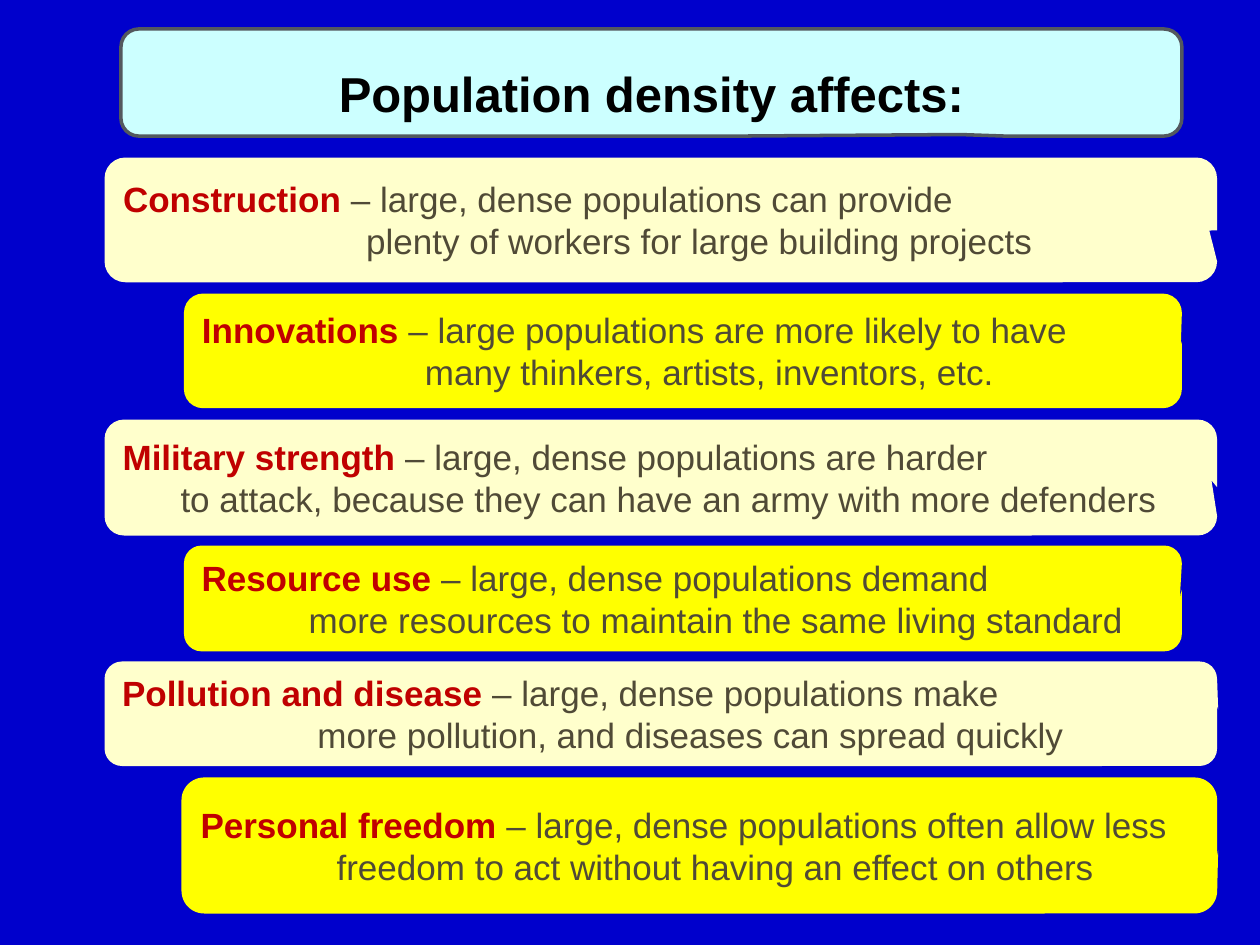
from pptx import Presentation
from pptx import util as u
from pptx.dml.color import RGBColor
from pptx.enum import shapes, text


def paint(part, hue):
    part.solid()
    part.fore_color.rgb = RGBColor.from_string(hue)


def callout(left, top, width, height, hue, tip):
    box = slide.shapes.add_shape(
        shapes.MSO_SHAPE.ROUNDED_RECTANGULAR_CALLOUT,
        u.Inches(left), u.Inches(top), u.Inches(width), u.Inches(height))
    box.shadow.inherit = False
    for i, value in enumerate((*tip, 0.167)):
        box.adjustments[i] = value
    paint(box.fill, hue)
    box.line.fill.background()
    return box


deck = Presentation()
deck.slide_width, deck.slide_height = u.Inches(10), u.Inches(7.5)
slide = deck.slides.add_slide(deck.slide_layouts[5])
paint(slide.background.fill, "0000CC")

banner = callout(0.96, 0.23, 8.42, 0.85, "CCFFFF", (0.291, 0.486))
paint(banner.line.fill, "53585E")
banner.line.width = u.Pt(2)

title = slide.shapes.title
title.left, title.top = banner.left, banner.top
title.width, title.height = banner.width, banner.height
slide.shapes._spTree.append(title._element)
frame = title.text_frame
frame.text = "Population density affects:"
frame.vertical_anchor = text.MSO_ANCHOR.MIDDLE
frame.margin_top, frame.margin_bottom = u.Inches(0.22), u.Inches(0.05)
para = frame.paragraphs[0]
para.alignment = text.PP_ALIGN.CENTER
para.font.name, para.font.size, para.font.bold = "Arial", u.Pt(28), True
paint(para.font.fill, "000000")

cream, yellow = "FFFFCC", "FFFF00"
rows = [
    (0.83, 1.25, 8.83, 0.99, cream, (0.493, 0.086), 1.93, "Construction",
     "large, dense populations can provide",
     "plenty of workers for large building projects"),
    (1.46, 2.33, 7.92, 0.91, yellow, (0.499, -0.049), 1.77, "Innovations",
     "large populations are more likely to have",
     "many thinkers, artists, inventors, etc."),
    (0.83, 3.33, 8.83, 0.92, cream, (0.495, 0.025), 0.46, "Military strength",
     "large, dense populations are harder",
     "to attack, because they can have an army with more defenders"),
    (1.46, 4.33, 7.92, 0.84, yellow, (0.498, -0.008), 0.85, "Resource use",
     "large, dense populations demand",
     "more resources to maintain the same living standard"),
    (0.83, 5.25, 8.83, 0.83, cream, (0.501, -0.038), 1.55, "Pollution and disease",
     "large, dense populations make",
     "more pollution, and diseases can spread quickly"),
    (1.44, 6.17, 8.22, 1.08, yellow, (0.501, 0.032), 1.08, "Personal freedom",
     "large, dense populations often allow less",
     "freedom to act without having an effect on others"),
]
for left, top, width, height, hue, tip, indent, term, first, second in rows:
    frame = callout(left, top, width, height, hue, tip).text_frame
    frame.word_wrap = True
    frame.vertical_anchor = text.MSO_ANCHOR.MIDDLE
    head, rest = frame.paragraphs[0], frame.add_paragraph()
    for para in (head, rest):
        para.alignment = text.PP_ALIGN.LEFT
        para.font.name, para.font.size = "Arial", u.Pt(20)
    label = head.add_run()
    label.text = term
    label.font.bold = True
    paint(label.font.fill, "C00000")
    for para, words in ((head, f" – {first}"), (rest, second)):
        run = para.add_run()
        run.text = words
        paint(run.font.fill, "504A36")
    rest._p.get_or_add_pPr().set("marL", str(u.Inches(indent)))

deck.save("out.pptx")
